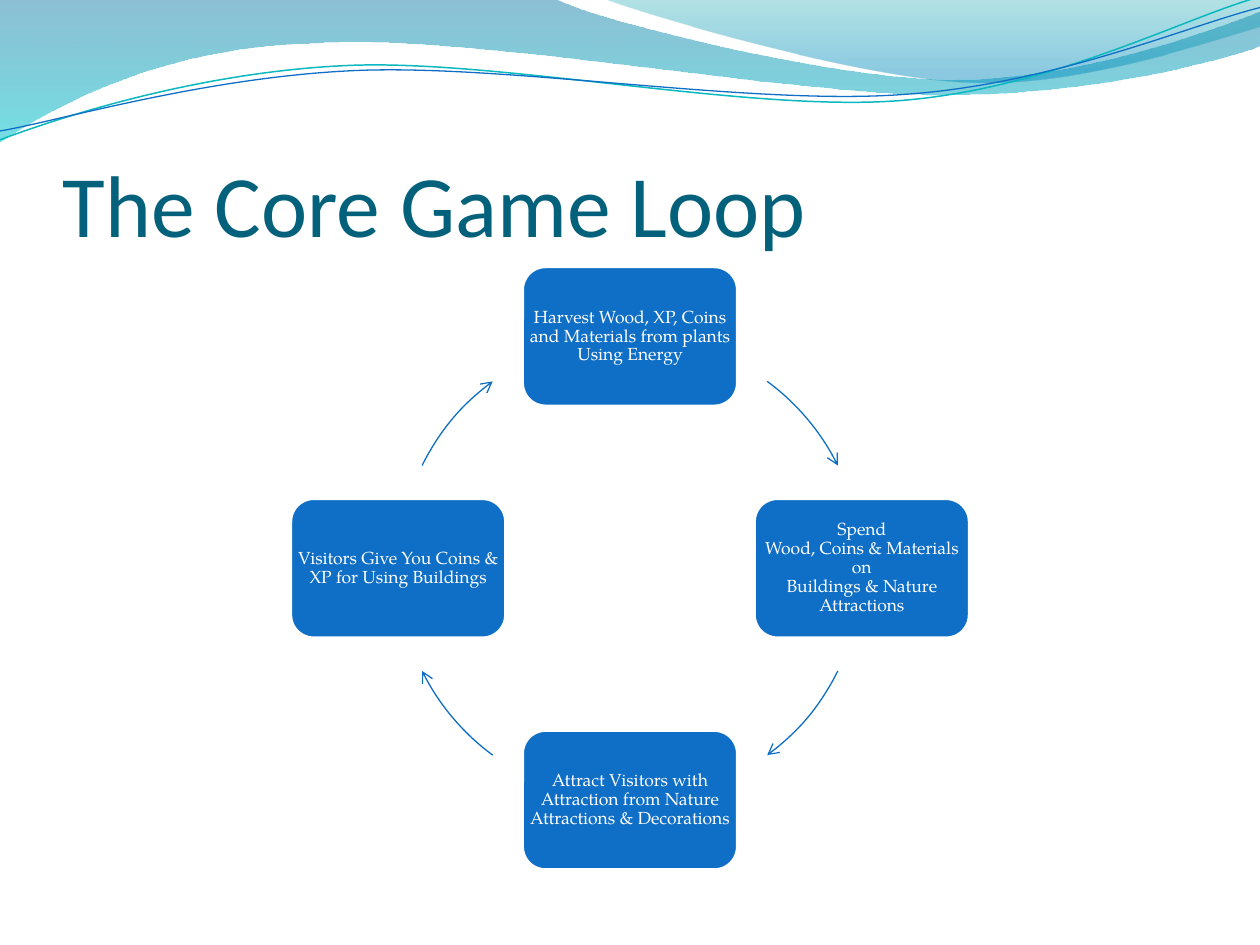
from lxml.etree import SubElement
from pptx import Presentation
from pptx.dml.color import RGBColor
from pptx.enum.shapes import MSO_SHAPE
from pptx.enum.text import MSO_ANCHOR, PP_ALIGN
from pptx.oxml.ns import qn
from pptx.util import Inches, Pt

BLUE, WHITE = "0F6FC6", "FFFFFF"
TITLE = "The Core Game Loop"
# Clockwise from the top: text, direction from the centre,
# middle angle of the arrow that follows
STEPS = [
    ("Harvest Wood, XP, Coins and Materials from plants Using Energy",
     (0, -1), 320),
    ("Spend\vWood, Coins & Materials\von\vBuildings & Nature Attractions",
     (1, 0), 40),
    ("Attract Visitors with Attraction from Nature Attractions & Decorations",
     (0, 1), 140),
    ("Visitors Give You Coins & XP for Using Buildings", (-1, 0), 220),
]
MID_X, MID_Y, RADIUS = 5, 4.51, 1.84
BOX_W, BOX_H = 1.71, 1.11
SWEEP = 27.4

# Two numbers make a line, six a Bezier curve
# Each wave: parts, gradient stops (position, colour, opacity %)
WAVES = [
    ([(0, 0), (4.4, -0.01), (4.76, 0.17, 6.64, 0.63, 7.58, 0.63),
      (8.53, 0.63, 9.58, 0.26, 10, 0.09), (10.01, 0.36),
      (9.83, 0.44, 8.7, 0.76, 7.46, 0.75),
      (6.22, 0.75, 3.82, 0.28, 2.57, 0.34),
      (1.29, 0.36, 0.46, 0.83, -0.01, 1.13), (0, 0)],
     [(0, "0074A1", 45), (1, "00C6CF", 55)]),
    ([(4.79, -0.01), (5.09, 0.11, 6.82, 0.62, 7.69, 0.65),
      (8.56, 0.69, 9.61, 0.32, 10, 0.21), (10, 0), (4.79, -0.01)],
     [(0, "00A1A9", 30), (0.8, "008BBF", 45)]),
]
# Each strand: parts, colour, line width
STRANDS = [
    ([(0, 1.11), (0.48, 0.93, 1.58, 0.57, 2.77, 0.52),
      (3.95, 0.47, 5.93, 0.89, 7.13, 0.8),
      (8.33, 0.71, 9.38, 0.15, 9.98, -0.02)], "0AB8BF", 0.85),
    ([(0, 1.04), (0.47, 0.96, 1.64, 0.61, 2.83, 0.56),
      (4.03, 0.51, 5.97, 0.84, 7.17, 0.75),
      (8.36, 0.67, 9.41, 0.21, 10, 0.06)], BLUE, 0.75),
]


def rgb(code):
    return RGBColor.from_string(code)


def draw(parts, close):
    """Build a freeform, then merge line triples into Bezier curves."""
    dots = [(Inches(x), Inches(y)) for part in parts
            for x, y in zip(part[::2], part[1::2])]
    pen = slide.shapes.build_freeform(*dots[0])
    pen.add_line_segments(dots[1:], close=close)
    shape = pen.convert_to_shape()
    shape.shadow.inherit = False
    lines = list(shape.element.iter(qn("a:lnTo")))
    for part in parts[1:]:
        size = len(part) // 2
        group, lines = lines[:size], lines[size:]
        if size == 3:
            group[0].tag = qn("a:cubicBezTo")
            for line in group[1:]:
                group[0].append(line[0])
                line.getparent().remove(line)
    return shape


def stroke(shape, color, width):
    shape.fill.background()
    shape.line.color.rgb = rgb(color)
    shape.line.width = Pt(width)


def style(para, font, size, color):
    para.font.name = font
    para.font.size = Pt(size)
    para.font.color.rgb = rgb(color)


def margins(frame, left, top, right, bottom):
    frame.margin_left, frame.margin_top = Inches(left), Inches(top)
    frame.margin_right, frame.margin_bottom = Inches(right), Inches(bottom)


def add_wave(parts, stops):
    shape = draw(parts, True)
    shape.line.fill.background()
    shape.fill.gradient()
    shape.fill.gradient_angle = 270
    for stop, (pos, color, alpha) in zip(shape.fill.gradient_stops, stops):
        stop.position = pos
        stop.color.rgb = rgb(color)
    tags = list(shape.element.spPr.iter(qn("a:srgbClr")))
    for tag, (pos, color, alpha) in zip(tags, stops):
        SubElement(tag, qn("a:alpha"), val=str(alpha * 1000))


def add_step(text, x, y):
    box = slide.shapes.add_shape(
        MSO_SHAPE.ROUNDED_RECTANGLE, Inches(x - BOX_W / 2),
        Inches(y - BOX_H / 2), Inches(BOX_W), Inches(BOX_H))
    box.shadow.inherit = False
    box.fill.solid()
    box.fill.fore_color.rgb = rgb(BLUE)
    box.line.color.rgb = rgb(WHITE)
    box.line.width = Pt(2)
    frame = box.text_frame
    frame.word_wrap = True
    frame.vertical_anchor = MSO_ANCHOR.MIDDLE
    # The rounded corners already inset the text by about 0.05
    margins(frame, 0, 0, 0, 0)
    frame.text = text
    para = frame.paragraphs[0]
    para.alignment = PP_ALIGN.CENTER
    para.line_spacing = 0.9
    style(para, "TeX Gyre Pagella", 10, WHITE)


def add_arrow(middle):
    arc = slide.shapes.add_shape(
        MSO_SHAPE.ARC, Inches(MID_X - RADIUS), Inches(MID_Y - RADIUS),
        Inches(2 * RADIUS), Inches(2 * RADIUS))
    arc.shadow.inherit = False
    # Angles are stored in 1/60000 degree, adjustments in 1/100000
    for i, side in enumerate((-1, 1)):
        arc.adjustments[i] = (middle + side * SWEEP / 2) * 0.6
    stroke(arc, BLUE, 0.75)
    line = arc.element.spPr.find(qn("a:ln"))
    SubElement(line, qn("a:tailEnd"), type="arrow")


deck = Presentation()
deck.slide_width, deck.slide_height = Inches(10), Inches(7.5)
slide = deck.slides.add_slide(deck.slide_layouts[6])

for parts, stops in WAVES:
    add_wave(parts, stops)
for parts, color, width in STRANDS:
    stroke(draw(parts, False), color, width)

head = slide.shapes.add_textbox(Inches(0.5), Inches(0.77), Inches(9), Inches(1.25))
frame = head.text_frame
frame.word_wrap = True
frame.vertical_anchor = MSO_ANCHOR.BOTTOM
margins(frame, 0, 0.05, 0, 0)
frame.text = TITLE
style(frame.paragraphs[0], "Calibri", 50, "04617B")

for text, (dx, dy), middle in STEPS:
    add_step(text, MID_X + dx * RADIUS, MID_Y + dy * RADIUS)
    add_arrow(middle)

deck.save("out.pptx")
